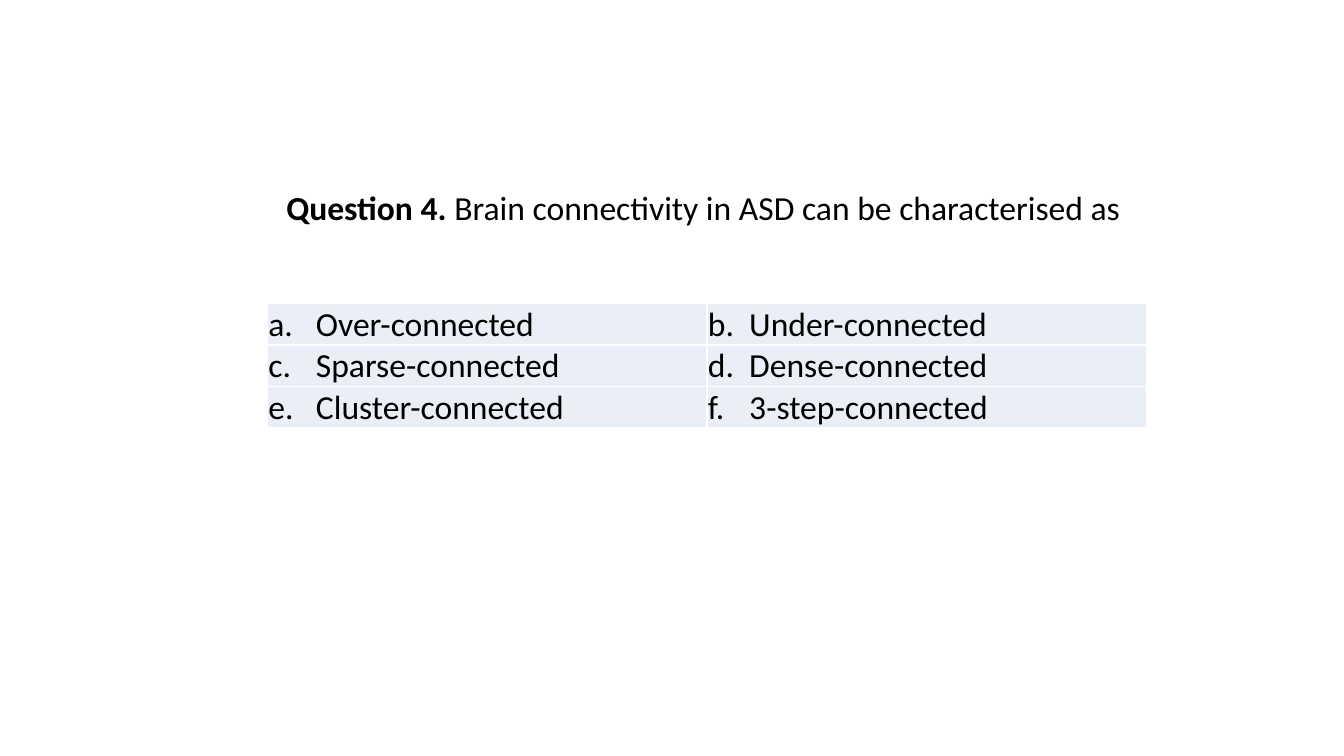
from lxml import etree
from pptx import Presentation
from pptx.dml.color import RGBColor
from pptx.enum.text import MSO_ANCHOR, MSO_AUTO_SIZE, PP_ALIGN
from pptx.oxml.ns import qn
from pptx.util import Pt

ANCHOR_TOP = MSO_ANCHOR.TOP
ANCHOR_MIDDLE = MSO_ANCHOR.MIDDLE
FIT_SHAPE = MSO_AUTO_SIZE.SHAPE_TO_FIT_TEXT
ALIGN_LEFT = PP_ALIGN.LEFT

BLACK = RGBColor(0x00, 0x00, 0x00)
WHITE = RGBColor(0xFF, 0xFF, 0xFF)
PALE_BLUE = RGBColor(0xEA, 0xEF, 0xF7)

TITLE_ONLY_LAYOUT = 5
COLUMN_WIDTH = Pt(314)
ROW_HEIGHT = Pt(29.3)
ANSWER_INDENTS = (Pt(34), Pt(29.5))
ANSWERS = (
    (("a.", "Over-connected"), ("b.", "Under-connected")),
    (("c.", "Sparse-connected"), ("d.", "Dense-connected")),
    (("e.", "Cluster-connected"), ("f.", "3-step-connected")),
)


def set_attributes(target, values):
    for name, value in values.items():
        setattr(target, name, value)


def add_run(paragraph, text, bold=False):
    run = paragraph.add_run()
    run.text = text
    set_attributes(run.font, {"name": "Calibri", "size": Pt(24), "bold": bold})
    run.font.color.rgb = BLACK


def add_question(slide, label, question):
    title = slide.shapes.title
    set_attributes(title, {"left": Pt(197.3), "top": Pt(128.2),
                           "width": Pt(621.4), "height": Pt(36.7)})
    set_attributes(title.text_frame, {
        "word_wrap": True, "auto_size": FIT_SHAPE, "vertical_anchor": ANCHOR_TOP,
        "margin_left": Pt(7.2), "margin_right": Pt(7.2),
        "margin_top": Pt(3.6), "margin_bottom": Pt(3.6),
    })
    paragraph = title.text_frame.paragraphs[0]
    set_attributes(paragraph, {"alignment": ALIGN_LEFT, "line_spacing": 1.07,
                               "space_after": Pt(6)})
    add_run(paragraph, label, bold=True)
    add_run(paragraph, question)


def set_borders(cell, color, width):
    properties = cell._tc.get_or_add_tcPr()
    for position, side in enumerate(("lnL", "lnR", "lnT", "lnB")):
        line = etree.Element(qn(f"a:{side}"), w=str(width))
        fill = etree.SubElement(line, qn("a:solidFill"))
        etree.SubElement(fill, qn("a:srgbClr"), val=str(color))
        properties.insert(position, line)


def set_hanging_indent(paragraph, indent):
    properties = paragraph._p.get_or_add_pPr()
    properties.set("marL", str(indent))
    properties.set("indent", str(-indent))


def fill_answer_cell(cell, letter, answer, indent):
    set_attributes(cell, {
        "vertical_anchor": ANCHOR_MIDDLE, "margin_left": Pt(0.7),
        "margin_right": Pt(0.7), "margin_top": Pt(0.7), "margin_bottom": 0,
    })
    cell.fill.solid()
    cell.fill.fore_color.rgb = PALE_BLUE
    set_borders(cell, WHITE, Pt(1))
    paragraph = cell.text_frame.paragraphs[0]
    set_hanging_indent(paragraph, indent)
    add_run(paragraph, f"{letter}\t{answer}")


def add_answer_table(slide, answers):
    row_count, column_count = len(answers), len(answers[0])
    table = slide.shapes.add_table(
        row_count, column_count, Pt(191), Pt(216.9),
        COLUMN_WIDTH * column_count, ROW_HEIGHT * row_count).table
    set_attributes(table, {"first_row": False, "horz_banding": False})
    for row_index, row in enumerate(answers):
        for column_index, (letter, answer) in enumerate(row):
            fill_answer_cell(table.cell(row_index, column_index),
                             letter, answer, ANSWER_INDENTS[column_index])


def main():
    presentation = Presentation()
    set_attributes(presentation, {"slide_width": Pt(960), "slide_height": Pt(540)})
    layout = presentation.slide_layouts[TITLE_ONLY_LAYOUT]
    slide = presentation.slides.add_slide(layout)
    add_question(slide, "Question 4.",
                 " Brain connectivity in ASD can be characterised as")
    add_answer_table(slide, ANSWERS)
    presentation.save("out.pptx")


if __name__ == "__main__":
    main()
